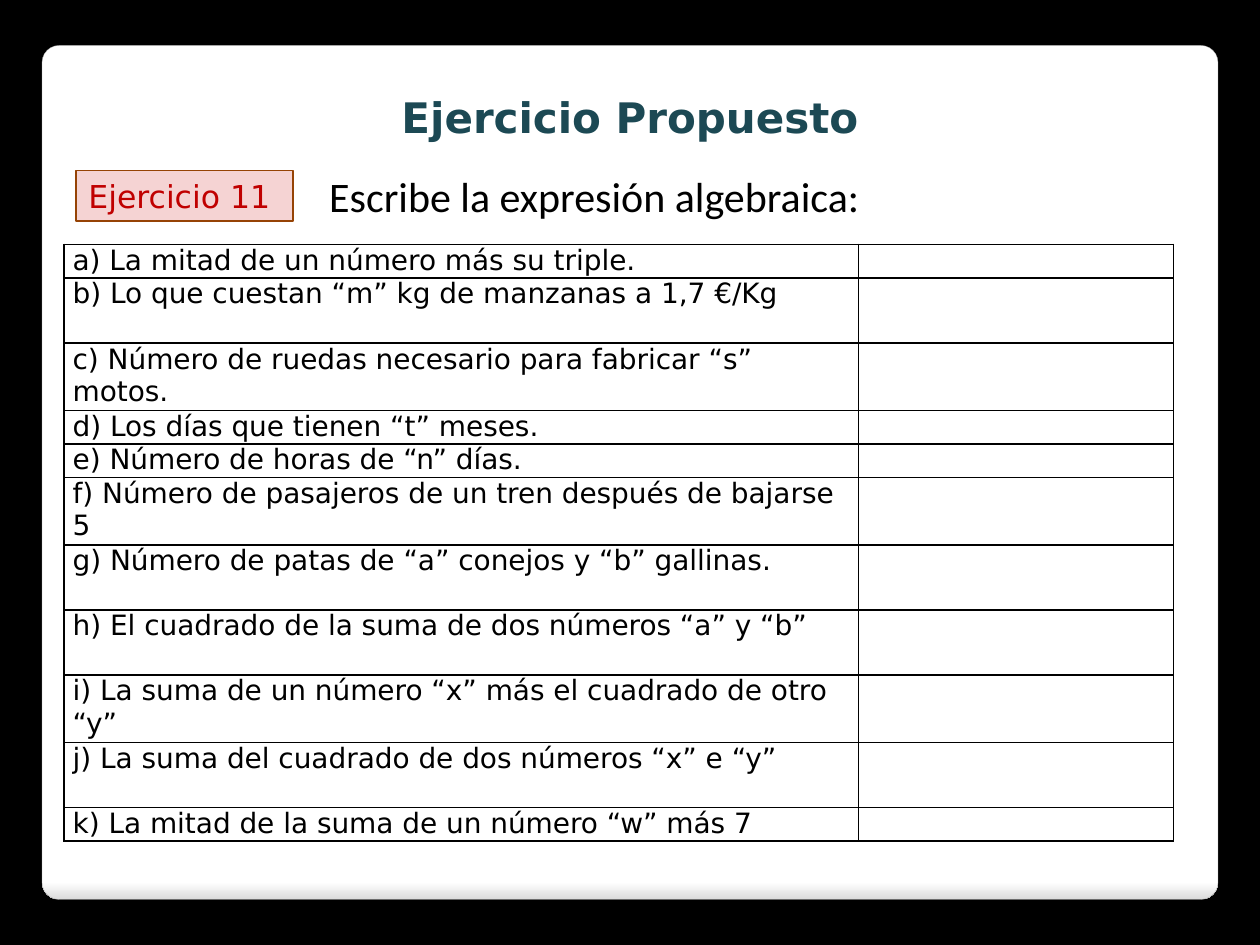
from lxml.etree import SubElement
from pptx import Presentation
from pptx.dml.color import RGBColor
from pptx.enum.shapes import MSO_SHAPE
from pptx.enum.text import MSO_ANCHOR, PP_ALIGN
from pptx.oxml.ns import qn
from pptx.util import Pt

COLORS = {
    "background": "000000",
    "panel": "FFFFFF",
    "panel_edge": "DADADA",
    "panel_line": "A4A4A4",
    "title": "1C4954",
    "badge": "F5D3D3",
    "badge_line": "964305",
    "badge_text": "C00000",
    "text": "000000",
}
SINGLE, DOUBLE = 19, 37.2
EXERCISES = [
    ("a) La mitad de un número más su triple.", SINGLE),
    ("b) Lo que cuestan “m” kg de manzanas a 1,7 €/Kg", DOUBLE),
    ("c) Número de ruedas necesario para fabricar “s” motos.", DOUBLE),
    ("d) Los días que tienen “t” meses.", SINGLE),
    ("e) Número de horas de “n” días.", SINGLE),
    ("f) Número de pasajeros de un tren después de bajarse 5", DOUBLE),
    ("g) Número de patas de “a” conejos y “b” gallinas.", DOUBLE),
    ("h) El cuadrado de la suma de dos números “a” y “b”", DOUBLE),
    ("i) La suma de un número “x” más el cuadrado de otro “y”", DOUBLE),
    ("j) La suma del cuadrado de dos números “x” e “y”", DOUBLE),
    ("k) La mitad de la suma de un número “w” más 7", SINGLE),
]


def color(name):
    return RGBColor.from_string(COLORS[name])


class SlideBuilder:
    """Holds the shared style and the slide being built."""

    font = "DejaVu Sans"
    cell_size = 16

    def __init__(self, slide):
        self.slide = slide
        fill = slide.background.fill
        fill.solid()
        fill.fore_color.rgb = color("background")

    def set_text(self, frame, text, size, tint, font=None, bold=False, align=PP_ALIGN.LEFT):
        frame.text = text
        frame.word_wrap = True
        paragraph = frame.paragraphs[0]
        paragraph.alignment = align
        for span in paragraph.runs:
            span.font.name = font or self.font
            span.font.size = Pt(size)
            span.font.bold = bold
            span.font.color.rgb = color(tint)
        return paragraph

    def shape(self, kind, place, line, line_width):
        shape = self.slide.shapes.add_shape(kind, *map(Pt, place))
        shape.shadow.inherit = False
        shape.line.color.rgb = color(line)
        shape.line.width = Pt(line_width)
        return shape

    def panel(self, place):
        panel = self.shape(MSO_SHAPE.ROUNDED_RECTANGLE, place, "panel_line", 0.16)
        panel.adjustments[0] = 0.02
        panel.fill.gradient()
        panel.fill.gradient_angle = 270
        stops = panel.fill.gradient_stops
        for stop, position, tint in zip(stops, (0.98, 1), ("panel", "panel_edge")):
            stop.position = position
            stop.color.rgb = color(tint)
        # The title placeholder already exists, so the panel goes behind it.
        self.slide.shapes.element.insert(2, panel.element)

    def title(self, text, place):
        title = self.slide.shapes.title
        title.left, title.top, title.width, title.height = map(Pt, place)
        title.text_frame.vertical_anchor = MSO_ANCHOR.MIDDLE
        self.set_text(title.text_frame, text, 24, "title", bold=True, align=PP_ALIGN.CENTER)

    def badge(self, text, place):
        badge = self.shape(MSO_SHAPE.RECTANGLE, place, "badge_line", 0.75)
        badge.fill.solid()
        badge.fill.fore_color.rgb = color("badge")
        self.set_text(badge.text_frame, text, 18, "badge_text")

    def instruction(self, text, place):
        box = self.slide.shapes.add_textbox(*map(Pt, place))
        paragraph = self.set_text(box.text_frame, text, 24, "text", font="Calibri")
        paragraph.space_after = Pt(6)

    def cell_border(self, cell):
        properties = cell._tc.get_or_add_tcPr()
        for side in ("a:lnL", "a:lnR", "a:lnT", "a:lnB"):
            line = SubElement(properties, qn(side), w=str(Pt(1)))
            fill = SubElement(line, qn("a:solidFill"))
            SubElement(fill, qn("a:srgbClr"), val=COLORS["text"])

    def answer_table(self, exercises, left, top, widths):
        height = sum(row_height for _, row_height in exercises)
        place = map(Pt, (left, top, sum(widths), height))
        table = self.slide.shapes.add_table(len(exercises), len(widths), *place).table
        table.first_row = table.horz_banding = False
        for column, width in zip(table.columns, widths):
            column.width = Pt(width)
        for row, (text, row_height) in zip(table.rows, exercises):
            row.height = Pt(row_height)
            for cell, content in zip(row.cells, (text, "")):
                cell.margin_left = cell.margin_right = Pt(5)
                cell.margin_top = cell.margin_bottom = 0
                self.cell_border(cell)
                cell.fill.background()
                if content:
                    paragraph = self.set_text(cell.text_frame, content, self.cell_size, "text")
                    paragraph.space_after = Pt(3)
                else:
                    # An empty cell's text size would otherwise stretch the row.
                    paragraph = cell.text_frame.paragraphs[0]
                    SubElement(paragraph._p, qn("a:endParaRPr"), sz=str(self.cell_size * 75))


def main():
    deck = Presentation()
    deck.slide_width, deck.slide_height = Pt(720), Pt(540)
    builder = SlideBuilder(deck.slides.add_slide(deck.slide_layouts[5]))
    builder.panel((24, 26, 672, 488))
    builder.title("Ejercicio Propuesto", (28, 48.5, 664, 36))
    builder.badge("Ejercicio 11", (43.5, 97.3, 124, 29))
    builder.instruction("Escribe la expresión algebraica:", (181, 94, 345, 36))
    builder.answer_table(EXERCISES, 36.5, 139.7, (454, 180))
    deck.save("out.pptx")


if __name__ == "__main__":
    main()
